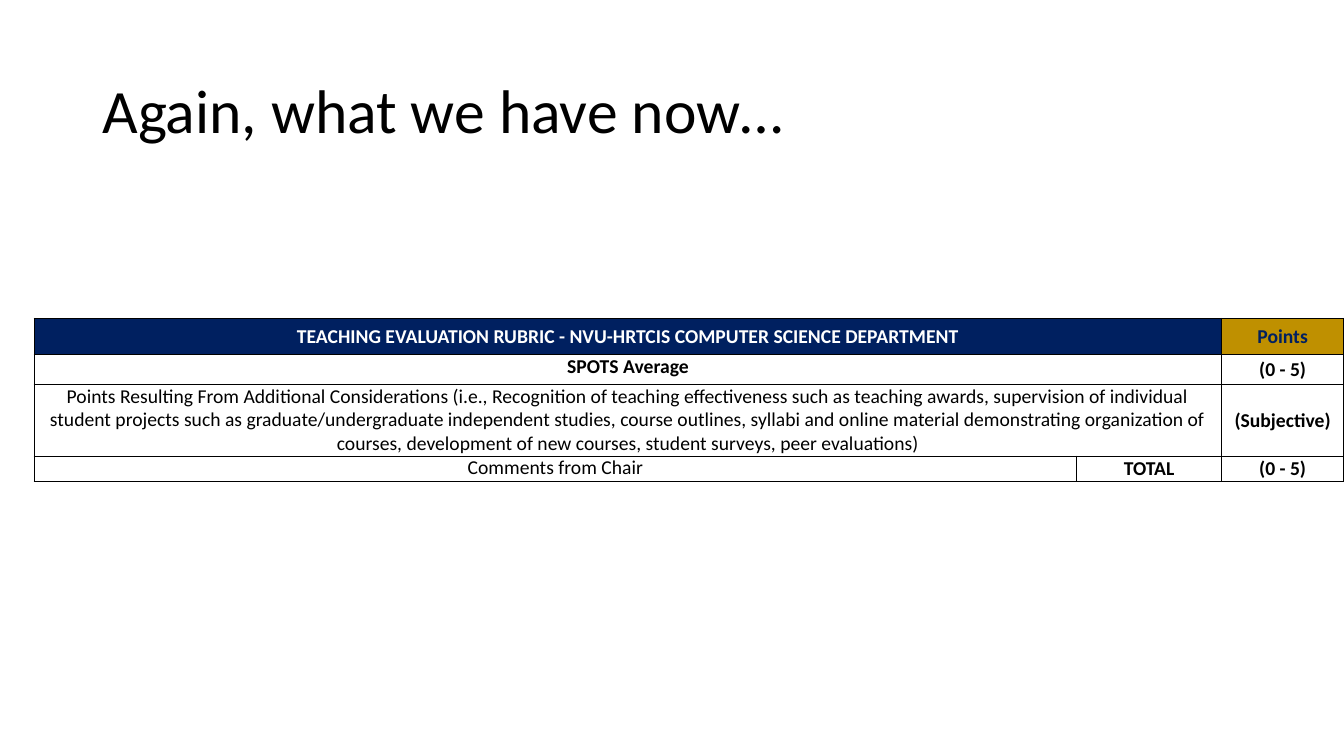
from dataclasses import dataclass

from lxml.etree import SubElement
from pptx import Presentation
from pptx.dml.color import RGBColor as RGB
from pptx.enum.text import MSO_ANCHOR as ANCHOR, PP_ALIGN as ALIGN
from pptx.oxml.ns import qn
from pptx.util import Pt

# Content: each cell is (column, columns spanned, text, style)
TITLE = "Again, what we have now…"
CONSIDERATIONS = (
    "Points Resulting From Additional Considerations (i.e., Recognition of teaching "
    "effectiveness such as teaching awards, supervision of individual student projects "
    "such as graduate/undergraduate independent studies, course outlines, syllabi and "
    "online material demonstrating organization of courses, development of new courses, "
    "student surveys, peer evaluations)"
)
RUBRIC = [
    [(0, 2, "TEACHING EVALUATION RUBRIC - NVU-HRTCIS COMPUTER SCIENCE DEPARTMENT", "header"),
     (2, 1, "Points", "points")],
    [(0, 2, "SPOTS Average", "label"), (2, 1, "(0 - 5)", "score")],
    [(0, 2, CONSIDERATIONS, "text"), (2, 1, "(Subjective)", "score")],
    [(0, 1, "Comments from Chair", "text"), (1, 1, "TOTAL", "score"), (2, 1, "(0 - 5)", "score")],
]


@dataclass(frozen=True)
class Theme:
    font: str = "Calibri"
    title_size: int = 44
    table_size: int = 14
    black: str = "000000"
    white: str = "FFFFFF"
    navy: str = "002060"
    gold: str = "BF9000"


T = Theme()
# Style: fill, text colour, bold, anchor
STYLES = {
    "header": (T.navy, T.white, True, ANCHOR.MIDDLE),
    "points": (T.gold, T.navy, True, ANCHOR.MIDDLE),
    "label": (T.white, T.black, True, ANCHOR.TOP),
    "text": (T.white, T.black, False, ANCHOR.TOP),
    "score": (T.white, T.black, True, ANCHOR.MIDDLE),
}

# Layout in points
SLIDE_W, SLIDE_H = 960, 540
TITLE_BOX = (66, 28.75, 828, 104.4)
TABLE_LEFT, TABLE_TOP = 24.5, 227.5
COL_WIDTHS = (744.5, 103.7, 87.1)
ROW_HEIGHTS = (25.7, 21.4, 51.3, 18)
BORDER = 1


def format_text(p, size, color, bold, align):
    p.alignment = align
    for r in p.runs:
        r.font.name = T.font
        r.font.size = Pt(size)
        r.font.bold = bold
        r.font.color.rgb = RGB.from_string(color)


def add_borders(cell):
    tc_pr = cell._tc.get_or_add_tcPr()
    for i, side in enumerate(("lnL", "lnR", "lnT", "lnB")):
        ln = SubElement(tc_pr, qn(f"a:{side}"), w=str(Pt(BORDER)))
        fill = SubElement(ln, qn("a:solidFill"))
        SubElement(fill, qn("a:srgbClr"), val=T.black)
        tc_pr.insert(i, ln)


def add_title(s):
    sp = s.shapes.title
    sp.left, sp.top, sp.width, sp.height = map(Pt, TITLE_BOX)
    tf = sp.text_frame
    tf.text = TITLE
    tf.vertical_anchor = ANCHOR.MIDDLE
    p = tf.paragraphs[0]
    p.line_spacing = 0.9
    format_text(p, T.title_size, T.black, False, ALIGN.LEFT)


def add_rubric(s):
    table = s.shapes.add_table(
        len(ROW_HEIGHTS), len(COL_WIDTHS), Pt(TABLE_LEFT), Pt(TABLE_TOP),
        Pt(sum(COL_WIDTHS)), Pt(sum(ROW_HEIGHTS))).table
    table.first_row = table.horz_banding = False
    for column, width in zip(table.columns, COL_WIDTHS):
        column.width = Pt(width)
    for row, height in zip(table.rows, ROW_HEIGHTS):
        row.height = Pt(height)

    # Cells
    for i, entries in enumerate(RUBRIC):
        for j, span, text, style in entries:
            fill, color, bold, anchor = STYLES[style]
            cell = table.cell(i, j)
            if span > 1:
                cell.merge(table.cell(i, j + span - 1))
            cell.text = text
            cell.vertical_anchor = anchor
            format_text(cell.text_frame.paragraphs[0], T.table_size, color, bold, ALIGN.CENTER)
            for k in range(j, j + span):
                part = table.cell(i, k)
                part.margin_left = part.margin_right = part.margin_top = part.margin_bottom = 0
                part.fill.solid()
                part.fill.fore_color.rgb = RGB.from_string(fill)
                add_borders(part)


def main():
    prs = Presentation()
    prs.slide_width, prs.slide_height = Pt(SLIDE_W), Pt(SLIDE_H)
    s = prs.slides.add_slide(prs.slide_layouts[5])
    add_title(s)
    add_rubric(s)
    prs.save("out.pptx")


if __name__ == "__main__":
    main()
